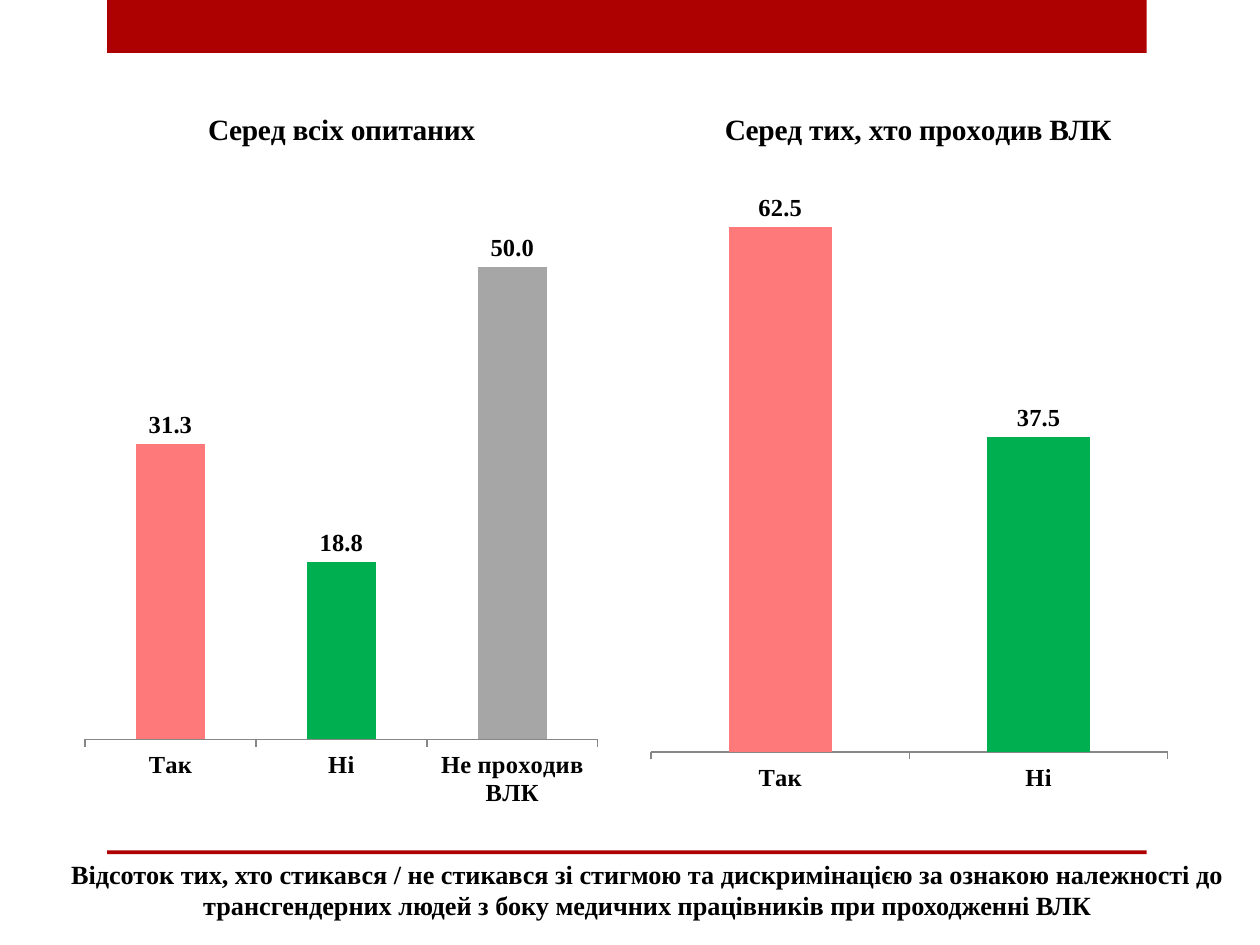
from dataclasses import dataclass

from lxml.etree import SubElement
from pptx import Presentation
from pptx.chart.data import CategoryChartData
from pptx.dml.color import RGBColor
from pptx.enum.chart import XL_CHART_TYPE, XL_LABEL_POSITION, XL_TICK_MARK
from pptx.enum.shapes import MSO_SHAPE
from pptx.enum.text import MSO_ANCHOR, MSO_AUTO_SIZE, PP_ALIGN
from pptx.oxml.ns import qn
from pptx.util import Inches, Pt


@dataclass(frozen=True)
class Theme:
    font: str = "Times New Roman"
    accent: str = "AD0101"
    text: str = "000000"
    axis: str = "878787"
    yes: str = "FE7979"
    no: str = "00B050"
    absent: str = "A6A6A6"
    caption_size: float = 15
    chart_size: float = 14
    chart_title_size: float = 16.8


class SlideBuilder:
    COLUMNS = 100
    ROWS = 75

    def __init__(self, presentation, theme):
        self.theme = theme
        self.width = presentation.slide_width
        self.height = presentation.slide_height
        self.slide = presentation.slides.add_slide(presentation.slide_layouts[5])

    def place(self, left, top, width, height):
        column, row = self.width / self.COLUMNS, self.height / self.ROWS
        return (round(left * column), round(top * row),
                round(width * column), round(height * row))

    def style_font(self, font, size):
        font.name = self.theme.font
        font.size = Pt(size)
        font.bold = True
        font.color.rgb = RGBColor.from_string(self.theme.text)

    def paint(self, fill, color):
        fill.solid()
        fill.fore_color.rgb = RGBColor.from_string(color)

    def add_bar(self, *area):
        shape = self.slide.shapes.add_shape(MSO_SHAPE.RECTANGLE, *self.place(*area))
        shape.shadow.inherit = False
        self.paint(shape.fill, self.theme.accent)
        shape.line.fill.background()

    def set_title(self, text, *area):
        title = self.slide.shapes.title
        title.left, title.top, title.width, title.height = self.place(*area)
        frame = title.text_frame
        frame.word_wrap = True
        frame.auto_size = MSO_AUTO_SIZE.NONE
        frame.vertical_anchor = MSO_ANCHOR.BOTTOM
        paragraph = frame.paragraphs[0]
        paragraph.alignment = PP_ALIGN.CENTER
        run = paragraph.add_run()
        run.text = text
        self.style_font(run.font, self.theme.caption_size)

    def add_column_chart(self, title, answers, maximum, plot, *area):
        data = CategoryChartData(number_format="###0.0")
        data.categories = [name for name, value, color in answers]
        data.add_series("Series 1", [value for name, value, color in answers])
        chart = self.slide.shapes.add_chart(
            XL_CHART_TYPE.COLUMN_CLUSTERED, *self.place(*area), data).chart
        self.style_font(chart.font, self.theme.chart_size)
        chart.has_legend = False
        chart.has_title = True
        run = chart.chart_title.text_frame.paragraphs[0].add_run()
        run.text = title
        self.style_font(run.font, self.theme.chart_title_size)
        chart.chart_title.include_in_layout = False
        self.style_axes(chart, maximum)
        self.style_columns(chart.plots[0], answers)
        self.fix_plot_area(chart, plot)

    def style_axes(self, chart, maximum):
        chart.value_axis.visible = False
        chart.value_axis.has_major_gridlines = False
        chart.value_axis.minimum_scale = 0
        chart.value_axis.maximum_scale = maximum
        axis = chart.category_axis
        axis.major_tick_mark = XL_TICK_MARK.OUTSIDE
        axis.format.line.color.rgb = RGBColor.from_string(self.theme.axis)

    def style_columns(self, plot, answers):
        plot.gap_width = 150
        plot.vary_by_categories = False
        plot.has_data_labels = True
        labels = plot.data_labels
        labels.show_value = True
        labels.number_format = "###0.0"
        labels.number_format_is_linked = False
        labels.position = XL_LABEL_POSITION.OUTSIDE_END
        self.style_font(labels.font, self.theme.chart_size)
        series = plot.series[0]
        self.paint(series.format.fill, self.theme.accent)
        for index, (name, value, color) in enumerate(answers):
            self.paint(series.points[index].format.fill, color)

    def fix_plot_area(self, chart, plot):
        plot_area = chart.plots[0]._element.getparent()
        layout = plot_area.find(qn("c:layout"))
        if layout is None:
            layout = SubElement(plot_area, qn("c:layout"))
            plot_area.insert(0, layout)
        manual = SubElement(layout, qn("c:manualLayout"))
        settings = [("layoutTarget", "inner"), ("xMode", "edge"), ("yMode", "edge")]
        settings += zip("xywh", plot)
        for tag, value in settings:
            SubElement(manual, qn(f"c:{tag}")).set("val", str(value))


def main():
    presentation = Presentation()
    presentation.slide_width = Inches(10)
    presentation.slide_height = Inches(7.5)
    theme = Theme()
    builder = SlideBuilder(presentation, theme)

    builder.add_bar(8.5, 0, 82.5, 4.2)
    builder.add_bar(8.5, 67.5, 82.5, 0.3)
    builder.set_title(
        "Відсоток тих, хто стикався / не стикався зі стигмою та дискримінацією "
        "за ознакою належності до трансгендерних людей з боку медичних "
        "працівників при проходженні ВЛК",
        2.8, 66.6, 97.2, 7)
    builder.add_column_chart(
        "Серед всіх опитаних",
        [("Так", 31.3, theme.yes), ("Ні", 18.8, theme.no),
         ("Не проходив ВЛК", 50, theme.absent)],
        60, (0.02, 0.12, 0.96, 0.77), 5.9, 6.7, 42.4, 58.4)
    builder.add_column_chart(
        "Серед тих, хто проходив ВЛК",
        [("Так", 62.5, theme.yes), ("Ні", 37.5, theme.no)],
        70, (0.02, 0.11, 0.93, 0.81), 50.8, 6.7, 44.1, 57.6)

    presentation.save("out.pptx")


if __name__ == "__main__":
    main()
